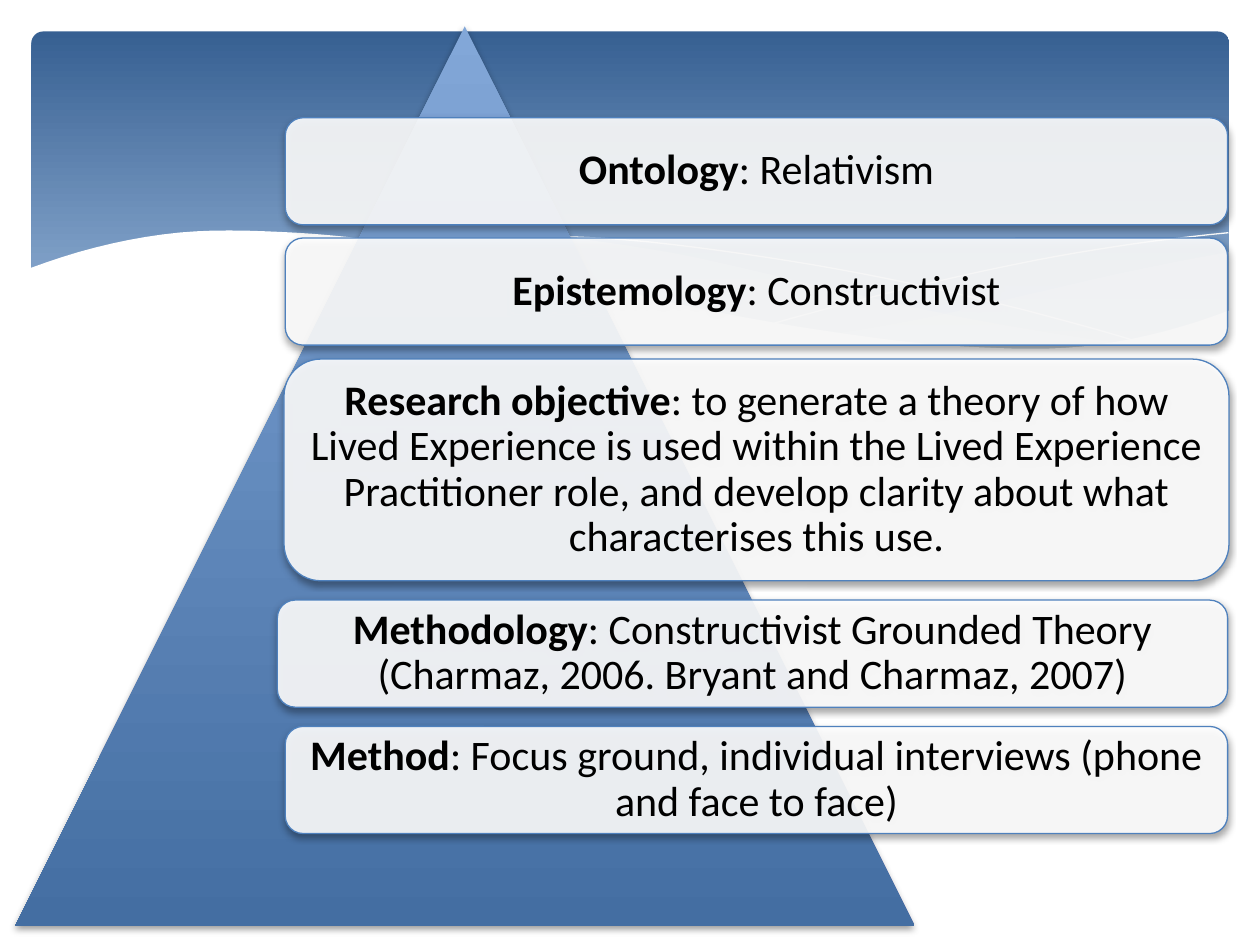
from lxml import etree
from pptx import Presentation
from pptx import util as u
from pptx.dml.color import RGBColor
from pptx.enum import shapes, text
from pptx.oxml.ns import qn

Pt = u.Pt
color = RGBColor.from_string

WHITE, CREAM, OUTLINE = "FFFFFF", "EEECE1", "4F81BD"
BANNER_STOPS = [(0, "376092"), (0.9, "95B3D7")]
PYRAMID_STOPS = [(0, "82A7D8"), (1, "446EA2")]
STEPS = 8       # straight pieces between two heights of a wave
UNIT = 10       # freeform units per point

deck = Presentation()
deck.slide_width, deck.slide_height = Pt(720), Pt(540)
page = deck.slides.add_slide(deck.slide_layouts[6])


def curve(left, right, heights):
    """Points of a smooth curve through heights at equal steps from left to right."""
    first, second, third = heights[:3]
    last, before, earlier = heights[:-4:-1]
    # One more height beyond each end continues the bend
    known = [3 * first - 3 * second + third, *heights, 3 * last - 3 * before + earlier]
    count = (len(heights) - 1) * STEPS
    points = []
    for step in range(count + 1):
        segment = min(step // STEPS, len(heights) - 2)
        t = step / STEPS - segment
        a, b, c, d = known[segment:segment + 4]
        # Catmull-Rom spline between b and c
        y = b + t / 2 * (c - a + t * (2 * a - 5 * b + 4 * c - d + t * (3 * (b - c) + d - a)))
        x = left + (right - left) * step / count
        points.append((x * UNIT, y * UNIT))
    return points


def paint(shape, stops=None, solid=None, opacity=100, line=None, width=0.75, shadow=False):
    """Set gradient or solid fill, outline and soft shadow; what is not given is off."""
    if stops:
        shape.fill.gradient()
        shape.fill.gradient_angle = 270
        for stop, (position, shade) in zip(shape.fill.gradient_stops, stops):
            stop.position = position
            stop.color.rgb = color(shade)
    elif solid:
        shape.fill.solid()
        shape.fill.fore_color.rgb = color(solid)
        fill = shape.element.spPr.find(qn("a:solidFill"))
        etree.SubElement(fill[0], qn("a:alpha"), val=str(opacity * 1000))
    else:
        shape.fill.background()
    if line:
        shape.line.color.rgb = color(line)
        shape.line.width = Pt(width)
    else:
        shape.line.fill.background()
    shape.shadow.inherit = False
    if shadow:
        effects = shape.element.spPr.find(qn("a:effectLst"))
        outer = etree.SubElement(effects, qn("a:outerShdw"), blurRad=str(Pt(4)),
                                 dist=str(Pt(2)), dir="5400000", rotWithShape="0")
        black = etree.SubElement(outer, qn("a:srgbClr"), val="000000")
        etree.SubElement(black, qn("a:alpha"), val="38000")


# Banner
banner = page.shapes.add_shape(shapes.MSO_SHAPE.ROUNDED_RECTANGLE,
                               Pt(18), Pt(18), Pt(684.5), Pt(194.5))
banner.adjustments[0] = 0.034
paint(banner, stops=BANNER_STOPS)

# Waves: left, right, heights of the upper edge, heights of the lower edge, look
# A wave without a lower edge is a hairline
hairline = dict(line=WHITE, width=0)
waves = [
    (476, 702.5, [191, 181, 168, 155, 144], [191, 197.5, 200, 194.5, 178],
     dict(solid=CREAM, opacity=29)),
    (206, 643, [137.5, 133.5, 144, 163.5, 182.5, 196.5],
     [137.5, 152.5, 173, 190, 199.5, 196.5], dict(solid=CREAM, opacity=40)),
    (222.5, 653, [140.5, 135.5, 147, 167.5, 196], None, hairline),
    (441.5, 702, [185, 162.5, 144.5, 133], None, hairline),
    (16.5, 703.5, [153.5, 134, 133, 142, 158.5, 176, 189.5, 198, 197, 177],
     [237, 237, 237], dict(solid=WHITE)),
]
for left, right, upper, lower, look in waves:
    outline = curve(left, right, upper)
    if lower:
        outline += reversed(curve(left, right, lower))
    builder = page.shapes.build_freeform(*outline[0], scale=Pt(1) / UNIT)
    builder.add_line_segments(outline[1:], close=lower is not None)
    paint(builder.convert_to_shape(), **look)

# Pyramid
pyramid = page.shapes.add_shape(shapes.MSO_SHAPE.ISOSCELES_TRIANGLE,
                                Pt(8.6), Pt(15.1), Pt(514), Pt(514))
paint(pyramid, stops=PYRAMID_STOPS, shadow=True)

# Cards, stacked downwards: gap above, left, right, height, heading, wording
LOW, TALL = 61.2, 126.7
cards = [
    (0, 163, 701.5, LOW, "Ontology", ": Relativism"),
    (7.5, 163, 701.5, LOW, "Epistemology", ": Constructivist"),
    (8, 162.3, 702.3, TALL, "Research objective",
     ": to generate a theory of how Lived Experience is used within the Lived Experience "
     "Practitioner role, and develop clarity about what characterises this use."),
    (11, 158.5, 701.5, LOW, "Methodology",
     ": Constructivist Grounded Theory (Charmaz, 2006. Bryant and Charmaz, 2007)"),
    (11, 163, 701.5, LOW, "Method",
     ": Focus ground, individual interviews (phone and face to face)"),
]
top = 67.3
for gap, left, right, height, heading, wording in cards:
    top += gap
    card = page.shapes.add_shape(shapes.MSO_SHAPE.ROUNDED_RECTANGLE,
                                 Pt(left), Pt(top), Pt(right - left), Pt(height))
    top += height
    paint(card, solid=WHITE, opacity=90, line=OUTLINE, shadow=True)
    frame = card.text_frame
    frame.word_wrap = True
    frame.vertical_anchor = text.MSO_ANCHOR.MIDDLE
    frame.margin_left = frame.margin_right = Pt(7.2)
    frame.margin_top = frame.margin_bottom = Pt(7.2)
    para = frame.paragraphs[0]
    para.alignment = text.PP_ALIGN.CENTER
    para.line_spacing = 0.9
    for words, bold in [(heading, True), (wording, False)]:
        span = para.add_run()
        span.text = words
        span.font.name = "Calibri"
        span.font.size = Pt(24)
        span.font.bold = bold
        span.font.color.rgb = color("000000")

deck.save("out.pptx")
